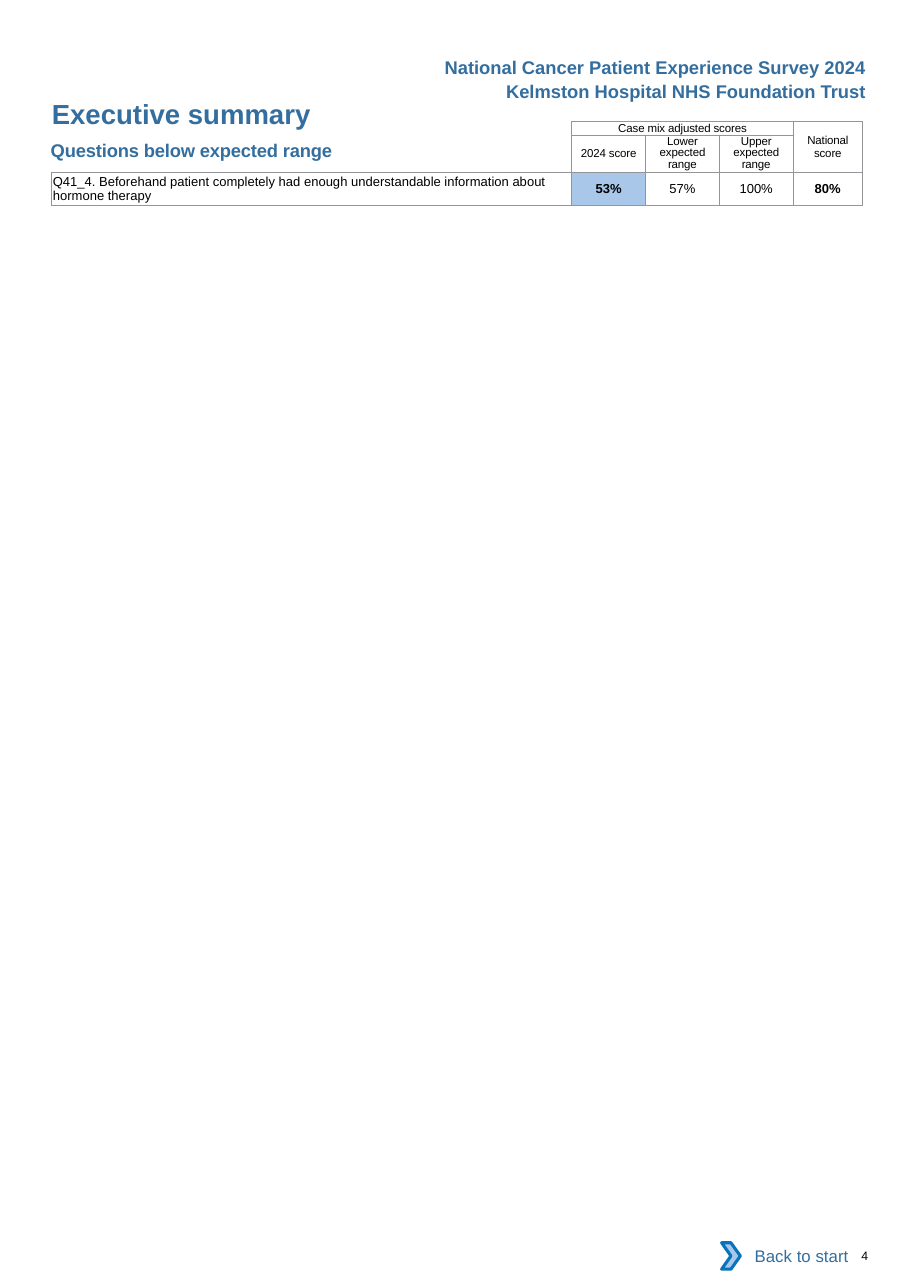
from lxml.etree import SubElement
from pptx import Presentation
from pptx.dml.color import RGBColor
from pptx.enum.shapes import MSO_SHAPE
from pptx.enum.text import MSO_ANCHOR, PP_ALIGN
from pptx.oxml.ns import qn
from pptx.util import Inches, Pt

BLUE, PALE_BLUE, EDGE_BLUE = "336E9F", "A8C7E9", "0A74BB"
BLACK, WHITE, RULE_GREY = "000000", "FFFFFF", "939598"
LEFT, CENTRE, RIGHT = PP_ALIGN.LEFT, PP_ALIGN.CENTER, PP_ALIGN.RIGHT
NO_INSETS = (0, 0, 0, 0)
BOX_INSETS = (0.1, 0.05, 0.1, 0.05)


def colour(hex_string):
    return RGBColor.from_string(hex_string)


def set_all(target, values):
    for attribute, value in values.items():
        setattr(target, attribute, value)


class ReportPage:
    """Holds the style and the slide; lengths are percentages of the slide."""

    font_name = "Arial"

    def __init__(self, deck):
        self.width, self.height = deck.slide_width, deck.slide_height
        self.slide = deck.slides.add_slide(deck.slide_layouts[6])

    def across(self, share):
        return round(self.width * share / 100)

    def down(self, share):
        return round(self.height * share / 100)

    def place(self, left, top, width, height):
        return self.across(left), self.down(top), self.across(width), self.down(height)

    def add_words(self, frame, words, size, ink=BLACK, bold=False, align=LEFT,
                  leading=None, before=0, spacing=0):
        paragraph = frame.paragraphs[0]
        set_all(paragraph, {"alignment": align, "space_before": Pt(before)})
        if leading:
            paragraph.line_spacing = Pt(leading)
        run = paragraph.add_run()
        run.text = words
        set_all(run.font, {"name": self.font_name, "size": Pt(size), "bold": bold})
        run.font.color.rgb = colour(ink)
        if spacing:
            run._r.get_or_add_rPr().set("spc", str(round(spacing * 100)))

    def frame_format(self, frame, insets, anchor=MSO_ANCHOR.TOP):
        sides = ("margin_left", "margin_top", "margin_right", "margin_bottom")
        set_all(frame, dict(zip(sides, map(Inches, insets))))
        set_all(frame, {"word_wrap": True, "vertical_anchor": anchor})

    def text(self, box, words, size, insets=NO_INSETS, **style):
        frame = self.slide.shapes.add_textbox(*self.place(*box)).text_frame
        self.frame_format(frame, insets)
        self.add_words(frame, words, size, **style)

    def shape(self, group, preset, box, fill, line=None):
        part = group.shapes.add_shape(preset, *self.place(*box))
        part.shadow.inherit = False
        part.fill.solid()
        part.fill.fore_color.rgb = colour(fill)
        if line:
            part.line.color.rgb = colour(line)
            part.line.width = Pt(2)
        else:
            part.line.fill.background()
        return part

    def back_link(self, words):
        group = self.slide.shapes.add_group_shape()
        label = self.shape(group, MSO_SHAPE.RECTANGLE, (80.15, 95.72, 14.29, 3.59), WHITE)
        self.frame_format(label.text_frame, BOX_INSETS, MSO_ANCHOR.MIDDLE)
        self.add_words(label.text_frame, words, 11, BLUE, align=RIGHT)
        self.shape(group, MSO_SHAPE.CHEVRON, (79.3, 96.49, 2.06, 2.05),
                   PALE_BLUE, EDGE_BLUE)

    def table(self, left, top, widths, heights):
        box = self.place(left, top, sum(widths), sum(heights))
        table = self.slide.shapes.add_table(len(heights), len(widths), *box).table
        set_all(table, {"first_row": False, "horz_banding": False})
        for column, width in zip(table.columns, widths):
            column.width = self.across(width)
        for row, height in zip(table.rows, heights):
            row.height = self.down(height)
        return table

    def cell(self, cell, sides="LRTB", fill=None):
        """Rules the named sides of a cell and fills it."""
        cell_insets = ("margin_left", "margin_top", "margin_right", "margin_bottom")
        set_all(cell, dict.fromkeys(cell_insets, 0))
        cell.vertical_anchor = MSO_ANCHOR.MIDDLE
        cell.text_frame.paragraphs[0]._p.get_or_add_endParaRPr().set("sz", "100")
        properties = cell._tc.get_or_add_tcPr()
        for side in "LRTB":
            rule = SubElement(properties, qn(f"a:ln{side}"), w=str(Pt(0.5)))
            if side in sides:
                solid = SubElement(rule, qn("a:solidFill"))
                SubElement(solid, qn("a:srgbClr"), val=RULE_GREY)
            else:
                SubElement(rule, qn("a:noFill"))
        if fill:
            cell.fill.solid()
            cell.fill.fore_color.rgb = colour(fill)
        else:
            cell.fill.background()

    def score_table(self, headings, questions):
        """Headings map (row, column) to words; each question is text plus scores."""
        table = self.table(5.69, 9.41, [57.14, 8.11, 8.11, 8.11, 7.63],
                           [1.03, 2.87] + [2.61] * len(questions))
        blank_corner = {(0, 0): "R", (1, 0): "RB"}
        for row in range(len(table.rows)):
            for column in range(len(table.columns)):
                fill = PALE_BLUE if row > 1 and column == 1 else None
                self.cell(table.cell(row, column),
                          blank_corner.get((row, column), "LRTB"), fill)
        for first, last in (((0, 0), (1, 0)), ((0, 1), (0, 3)), ((0, 4), (1, 4))):
            table.cell(*first).merge(table.cell(*last))
        for position, (words, leading) in headings.items():
            self.add_words(table.cell(*position).text_frame, words, 7.5,
                           align=CENTRE, leading=leading, spacing=-0.1)
        for row, (question, *scores) in enumerate(questions, 2):
            self.add_words(table.cell(row, 0).text_frame, question, 8.5)
            table.cell(row, 0).margin_left = Inches(0.01)
            for column, score in enumerate(scores, 1):
                self.add_words(table.cell(row, column).text_frame, score, 8.5,
                               bold=column in (1, 4), align=CENTRE)


def main():
    deck = Presentation()
    set_all(deck, {"slide_width": Inches(8.26), "slide_height": Inches(11.69)})
    page = ReportPage(deck)
    heading = {"ink": BLUE, "bold": True}

    running_heads = ("National Cancer Patient Experience Survey 2024",
                     "Kelmston Hospital NHS Foundation Trust")
    for line, words in enumerate(running_heads):
        page.text((47.46, 3.93 + 1.9 * line, 48.91, 2.57), words, 12,
                  BOX_INSETS, align=RIGHT, **heading)
    page.text((5.69, 7.53, 31.96, 2.57), "Executive summary", 18, before=1, **heading)
    page.text((5.57, 10.78, 36.44, 1.71), "Questions below expected range", 12,
              spacing=-0.1, **heading)

    page.score_table(
        {(0, 1): ("Case mix adjusted scores", 9),
         (0, 4): ("National score", None),
         (1, 1): ("2024 score", None),
         (1, 2): ("Lower expected range", 7.6),
         (1, 3): ("Upper expected range", 7.6)},
        [("Q41_4. Beforehand patient completely had enough understandable "
          "information about hormone therapy", "53%", "57%", "100%", "80%")])

    page.back_link("Back to start")
    page.text((93.46, 96.92, 6.17, 1.11), "4", 8, (0.1, 0, 0, 0))
    deck.save("out.pptx")


if __name__ == "__main__":
    main()
